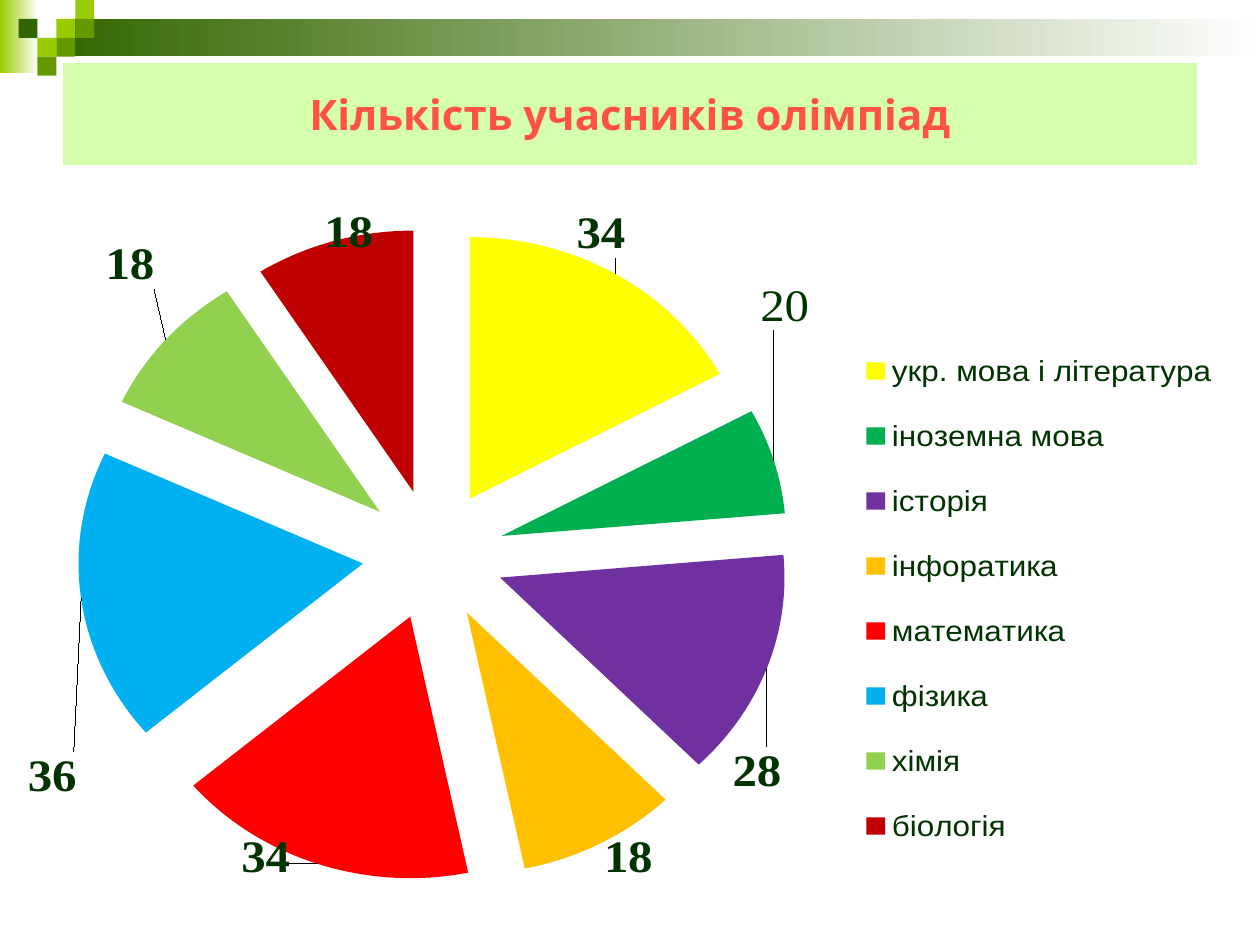
from lxml import etree
from pptx import Presentation
from pptx.chart.data import CategoryChartData
from pptx.dml.color import RGBColor
from pptx.enum import chart as kinds, shapes, text
from pptx.oxml.ns import qn
from pptx.util import Pt


def paint(fill, *tones):
    """One colour gives a solid fill, two a left-to-right gradient."""
    if len(tones) == 1:
        fill.solid()
        fill.fore_color.rgb = RGBColor.from_string(tones[0])
        return
    fill.gradient()
    fill.gradient_angle = 0
    for stop, tone in zip(fill.gradient_stops, tones):
        stop.color.rgb = RGBColor.from_string(tone)


def place(node, spot, **vals):
    """Give a chart part a manual layout as its child number spot."""
    for old in node.findall(qn("c:layout")):
        node.remove(old)
    layout = etree.Element(qn("c:layout"))
    manual = etree.SubElement(layout, qn("c:manualLayout"))
    for key, val in vals.items():
        etree.SubElement(manual, qn("c:" + key)).set("val", str(val))
    node.insert(spot, layout)


deck = Presentation()
deck.slide_width, deck.slide_height = Pt(720), Pt(540)
slide = deck.slides.add_slide(deck.slide_layouts[5])

# Corner mosaic and top band: left, top, width, height, colours
lime, leaf, dark, side = "99CC00", "669900", "336600", 10.8
parts = [(0, 0, 22, 42, lime, "FFFFFF"), (32.4, 10.8, 687.6, 21.4, dark, "FFFFFF")]
tiles = [(2, 1, lime), (3, 0, lime), (3, 1, leaf), (1, 2, lime),
         (0, 1, dark), (2, 2, leaf), (1, 3, leaf)]
parts += [(10.6 + col * side, row * side, side, side, tone) for col, row, tone in tiles]
for left, top, wide, high, *tones in parts:
    box = slide.shapes.add_shape(shapes.MSO_SHAPE.RECTANGLE,
                                 Pt(left), Pt(top), Pt(wide), Pt(high))
    box.shadow.inherit = False
    box.line.fill.background()
    paint(box.fill, *tones)

# Title
title = slide.shapes.title
for key, val in dict(left=36, top=36, width=648, height=58.3).items():
    setattr(title, key, Pt(val))
paint(title.fill, "D6FFAD")
title.text_frame.text = "Кількість учасників олімпіад"
title.text_frame.vertical_anchor = text.MSO_ANCHOR.MIDDLE
para = title.text_frame.paragraphs[0]
para.alignment = text.PP_ALIGN.CENTER
font = para.runs[0].font
for key, val in dict(name="Karla", size=Pt(24), bold=True).items():
    setattr(font, key, val)
paint(font.fill, "FF5244")

# Pie: subject, value, colour, label shift in percent of the chart
rows = [("укр. мова і література", 34, "FFFF00", -3.5, -1.5),
        ("іноземна мова", 13, "00B050", -1.7, -19),
        ("історія", 28, "7030A0", -3.4, 11.2),
        ("інфоратика", 18, "FFC000", 0, -1.5),
        ("математика", 34, "FF0000", -2.1, -4.4),
        ("фізика", 36, "00B0F0", 0, 22.6),
        ("хімія", 18, "92D050", -0.5, -6.8),
        ("біологія", 18, "C00000", 3.4, 3)]
data = CategoryChartData()
data.categories = [row[0] for row in rows]
data.add_series("Series 1", [row[1] for row in rows])
chart = slide.shapes.add_chart(kinds.XL_CHART_TYPE.PIE, Pt(14.4), Pt(105.8),
                               Pt(693.4), Pt(419.8), data).chart
chart.has_title = False
chart.font.name, chart.font.size = "Arial", Pt(18)
paint(chart.font.fill, "003300")
area = chart.plots[0]
area.vary_by_categories = True
place(chart._chartSpace.chart.plotArea, 0, layoutTarget="inner", xMode="edge",
      yMode="edge", x=0, y=0.03, w=0.67, h=0.97)

# Legend
chart.has_legend = True
chart.legend.position = kinds.XL_LEGEND_POSITION.RIGHT
chart.legend.include_in_layout = False
place(chart.legend._element, 1, xMode="edge", yMode="edge", x=0.68, y=0.17, w=0.31, h=0.82)

# Slices and their value labels, each kept on one line
pie = area.series[0]
burst = etree.Element(qn("c:explosion"))
burst.set("val", "25")
pie._element.find(qn("c:tx")).addnext(burst)
labels = pie.data_labels
labels.show_value = True
look = dict(name="Times New Roman", size=Pt(28), bold=True)
for key, val in look.items():
    setattr(labels.font, key, val)
paint(labels.font.fill, "003300")
for spot, (name, value, tone, across, down) in enumerate(rows):
    point = pie.points[spot]
    paint(point.format.fill, tone)
    label = point.data_label
    font = label.font
    if name == "іноземна мова":
        label.text_frame.text = "20"
        font = label.text_frame.paragraphs[0].runs[0].font
    for key, val in look.items():
        setattr(font, key, val)
    font.bold = name != "іноземна мова"
    paint(font.fill, "003300")
    label.position = kinds.XL_LABEL_POSITION.OUTSIDE_END
    node = labels._element.findall(qn("c:dLbl"))[spot]
    place(node, 1, x=across / 100, y=down / 100)
for body in labels._element.iter(qn("a:bodyPr")):
    body.set("wrap", "none")
lead = labels._element.find(qn("c:showLeaderLines"))
if lead is None:
    lead = etree.SubElement(labels._element, qn("c:showLeaderLines"))
lead.set("val", "1")

deck.save("out.pptx")
